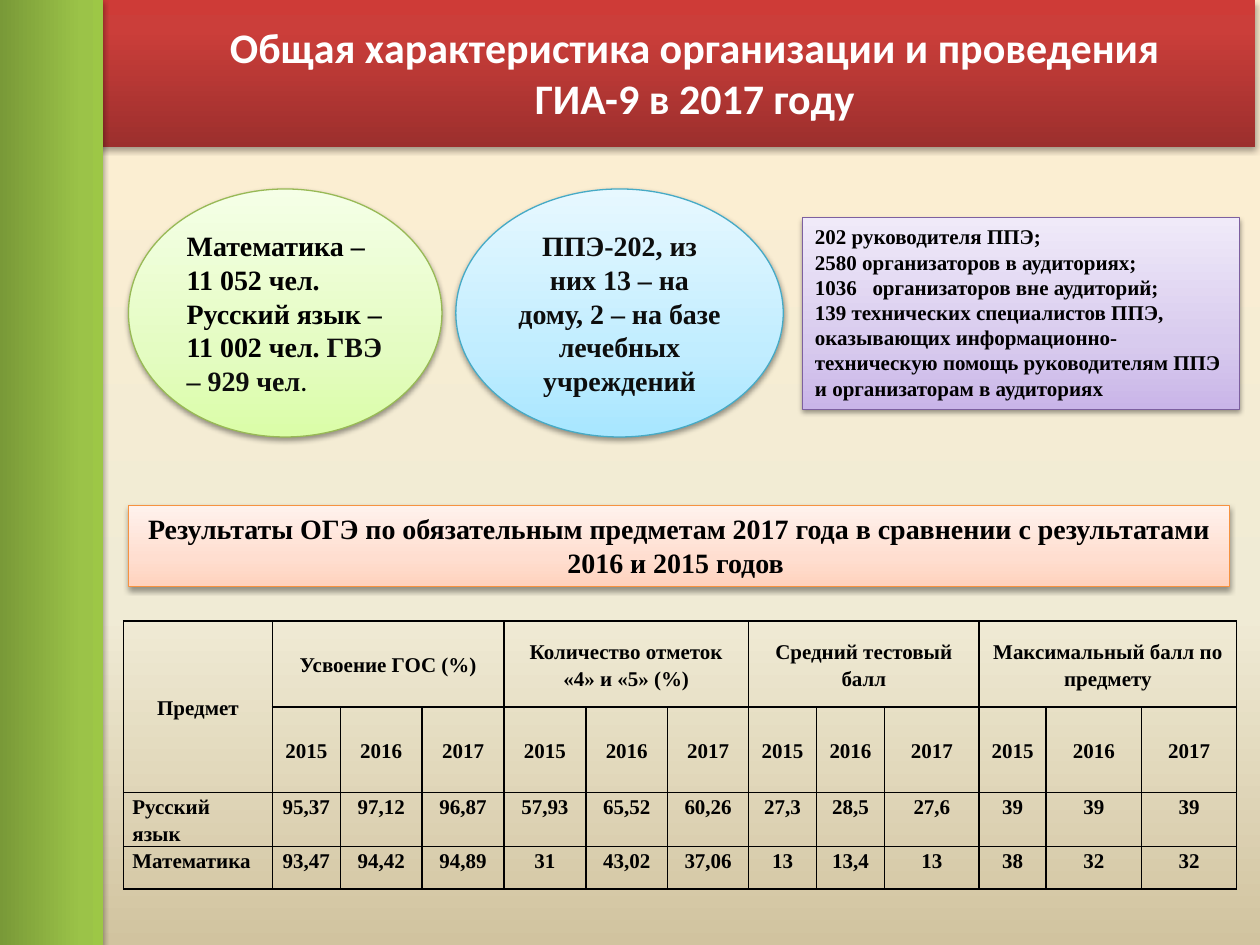
"""Build the slide on how the GIA-9 exams of 2017 were organised and what they showed."""
from lxml.etree import SubElement
from pptx import Presentation
from pptx.dml.color import RGBColor
from pptx.enum.shapes import MSO_SHAPE
from pptx.enum.text import MSO_ANCHOR, MSO_AUTO_SIZE, PP_ALIGN
from pptx.oxml.ns import qn
from pptx.util import Cm, Pt

SERIF = {"name": "Times New Roman", "size": Pt(16), "bold": True, "color": "000000"}
DARK = {**SERIF, "color": "0D0D0D"}
SMALL = {**SERIF, "size": Pt(12)}
PLAIN = {**SERIF, "name": "Calibri", "bold": False}
TITLE = {"name": "Calibri", "size": Pt(24), "bold": True, "color": "FFFFFF"}

BACKGROUND = [(0, "FFEFD1"), (65, "F0EBD5"), (100, "D1C39F")]
CARD_SHADOW = {"alpha": 38, "distance": 1.6}
BAND_SHADOW = {"alpha": 35, "distance": 1.8}

ELLIPSES = [
    {"place": (2.59, 3.81, 6.32, 5), "line": "98B955", "align": PP_ALIGN.LEFT,
     "stops": [(0, "DAFDA7"), (35, "E4FCC2"), (100, "F5FFE7")],
     "text": [[("Математика – 11 052 чел.", SERIF)],
              [("Русский язык – 11 002 чел.", SERIF), (" ГВЭ – 929 чел", DARK), (".", PLAIN)]]},
    {"place": (9.19, 3.81, 6.6, 5), "line": "46AAC5", "align": PP_ALIGN.CENTER,
     "stops": [(0, "A7E6FF"), (35, "C1EDFF"), (100, "E7F8FF")],
     "text": [[("ППЭ-202, из них 13 – на дому, 2 – на базе лечебных учреждений", DARK)]]},
]
PANELS = [
    {"place": (2.59, 10.19, 22.2, 1.63), "line": "F69240", "align": PP_ALIGN.CENTER,
     "stops": [(0, "FFD2BD"), (35, "FFDED0"), (100, "FFF2ED")],
     "text": [[("Результаты ОГЭ по обязательным предметам 2017 года "
                "в сравнении с результатами 2016 и 2015 годов ", SERIF)]]},
    {"place": (16.18, 4.39, 8.81, 3.86), "line": "7D60A0", "align": PP_ALIGN.LEFT,
     "stops": [(0, "C9B5E8"), (35, "D8CBEE"), (100, "F0EAF9")], "tab": 1.16,
     "text": [[("202 руководителя ППЭ;", SMALL)],
              [("2580 организаторов в аудиториях;", SMALL)],
              [("1036\tорганизаторов вне аудиторий;", SMALL)],
              [("139 технических специалистов ППЭ, оказывающих информационно-техническую "
                "помощь руководителям ППЭ и организаторам в аудиториях", SMALL)]]},
]
BANDS = [
    {"place": (-0.1, 0, 25.4, 2.97), "turn": 0,
     "stops": [(0, "9C2F2D"), (80, "CB3E3A"), (100, "CE3B37")]},
    {"place": (-8.53, 8.43, 19.05, 2.18), "turn": 90,
     "stops": [(0, "779737"), (80, "9BC348"), (100, "9DC746")]},
]
TITLE_PLACE = (3.91, 0.2, 20.19, 2.51)
TITLE_TEXT = "Общая характеристика организации и проведения ГИА-9 в 2017 году"

TABLE_PLACE = (2.49, 12.52, 22.4, 5.18)
COLUMN_WIDTHS = [3, 1.37, 1.65, 1.65, 1.65, 1.65, 1.63, 1.37, 1.37, 1.91, 1.35, 1.92, 1.92]
ROW_HEIGHTS = [1.73, 1.73, 0.86, 0.86]
SUBJECT_HEADING = "Предмет"
MEASURES = ["Усвоение ГОС (%)", "Количество отметок «4» и «5» (%)",
            "Средний тестовый балл", "Максимальный балл по предмету"]
YEARS = ["2015", "2016", "2017"]
RESULTS = [
    ["Русский язык", "95,37", "97,12", "96,87", "57,93", "65,52", "60,26",
     "27,3", "28,5", "27,6", "39", "39", "39"],
    ["Математика", "93,47", "94,42", "94,89", "31", "43,02", "37,06",
     "13", "13,4", "13", "38", "32", "32"],
]


def color(value):
    return RGBColor.from_string(value)


def lengths(place):
    return [Cm(value) for value in place]


def add_node(parent, tag, **attributes):
    return SubElement(parent, qn(tag), {key: str(value) for key, value in attributes.items()})


def set_gradient(owner, element, stops, angle):
    owner.fill.solid()
    solid = next(element.iter(qn("a:solidFill")))
    gradient = add_node(solid.getparent(), "a:gradFill", rotWithShape=1)
    solid.getparent().replace(solid, gradient)
    stop_list = add_node(gradient, "a:gsLst")
    for position, value in stops:
        stop = add_node(stop_list, "a:gs", pos=position * 1000)
        add_node(stop, "a:srgbClr", val=value)
    add_node(gradient, "a:lin", ang=angle * 60000, scaled=0)


def set_shadow(shape, alpha, distance):
    shape.shadow.inherit = False
    effects = next(shape.element.iter(qn("a:effectLst")))
    outer = add_node(effects, "a:outerShdw", blurRad=Pt(3.1), dist=Pt(distance),
                     dir=90 * 60000, rotWithShape=0)
    tint = add_node(outer, "a:srgbClr", val="000000")
    add_node(tint, "a:alpha", val=alpha * 1000)


def write(frame, paragraphs, align, tab=None, spacing=None):
    for index, spans in enumerate(paragraphs):
        para = frame.add_paragraph() if index else frame.paragraphs[0]
        para.alignment = align
        para.line_spacing = spacing
        if tab:
            tabs = add_node(para._p.get_or_add_pPr(), "a:tabLst")
            add_node(tabs, "a:tab", pos=Cm(tab), algn="l")
        for text, style in spans:
            span = para.add_run()
            span.text = text
            for key, value in style.items():
                if key == "color":
                    span.font.color.rgb = color(value)
                else:
                    setattr(span.font, key, value)


def add_filled(page, kind, item, shadow):
    shape = page.shapes.add_shape(kind, *lengths(item["place"]))
    set_gradient(shape, shape.element, item["stops"], 270)
    set_shadow(shape, **shadow)
    return shape


def add_card(page, kind, item, anchor, auto_size):
    card = add_filled(page, kind, item, CARD_SHADOW)
    card.line.color.rgb = color(item["line"])
    card.line.width = Pt(0.75)
    for key, value in {"vertical_anchor": anchor, "auto_size": auto_size,
                       "word_wrap": True}.items():
        setattr(card.text_frame, key, value)
    write(card.text_frame, item["text"], item["align"], item.get("tab"))


def add_band(page, item):
    band = add_filled(page, MSO_SHAPE.RECTANGLE, item, BAND_SHADOW)
    band.line.fill.background()
    band.rotation = item["turn"]


def format_cell(cell, anchor):
    settings = {"margin_left": Cm(0.18), "margin_right": Cm(0.18), "margin_top": 0,
                "margin_bottom": 0, "vertical_anchor": anchor}
    for key, value in settings.items():
        setattr(cell, key, value)
    properties = cell._tc.get_or_add_tcPr()
    for side in ("a:lnL", "a:lnR", "a:lnT", "a:lnB"):
        border = add_node(properties, side, w=Pt(1))
        add_node(add_node(border, "a:solidFill"), "a:srgbClr", val="000000")
    cell.fill.background()


def add_results(page):
    step = len(YEARS)
    heading = [SUBJECT_HEADING]
    for measure in MEASURES:
        heading += [measure] + [""] * (step - 1)
    rows = [heading, [""] + YEARS * len(MEASURES)] + RESULTS
    table = page.shapes.add_table(len(rows), len(heading), *lengths(TABLE_PLACE)).table
    table.first_row = table.horz_banding = False
    for column, width in zip(table.columns, COLUMN_WIDTHS):
        column.width = Cm(width)
    for row, height in zip(table.rows, ROW_HEIGHTS):
        row.height = Cm(height)
    table.cell(0, 0).merge(table.cell(1, 0))
    for start in range(1, len(heading), step):
        table.cell(0, start).merge(table.cell(0, start + step - 1))
    for row_index, row in enumerate(rows):
        for column_index, text in enumerate(row):
            cell = table.cell(row_index, column_index)
            is_heading = row_index < 2
            format_cell(cell, MSO_ANCHOR.MIDDLE if is_heading else MSO_ANCHOR.TOP)
            if text:
                align = PP_ALIGN.CENTER if is_heading or column_index else PP_ALIGN.LEFT
                write(cell.text_frame, [[(text, SMALL)]], align, spacing=1.15)


def main():
    deck = Presentation()
    deck.slide_width, deck.slide_height = Cm(25.4), Cm(19.05)
    page = deck.slides.add_slide(deck.slide_layouts[6])
    set_gradient(page.background, page.element, BACKGROUND, 90)
    for item in ELLIPSES:
        add_card(page, MSO_SHAPE.OVAL, item, MSO_ANCHOR.MIDDLE, MSO_AUTO_SIZE.NONE)
    add_results(page)
    for item in PANELS:
        add_card(page, MSO_SHAPE.RECTANGLE, item, MSO_ANCHOR.TOP,
                 MSO_AUTO_SIZE.SHAPE_TO_FIT_TEXT)
    for item in BANDS:
        add_band(page, item)
    box = page.shapes.add_textbox(*lengths(TITLE_PLACE))
    box.text_frame.word_wrap = True
    box.text_frame.vertical_anchor = MSO_ANCHOR.MIDDLE
    write(box.text_frame, [[(TITLE_TEXT, TITLE)]], PP_ALIGN.CENTER)
    deck.save("out.pptx")


if __name__ == "__main__":
    main()
